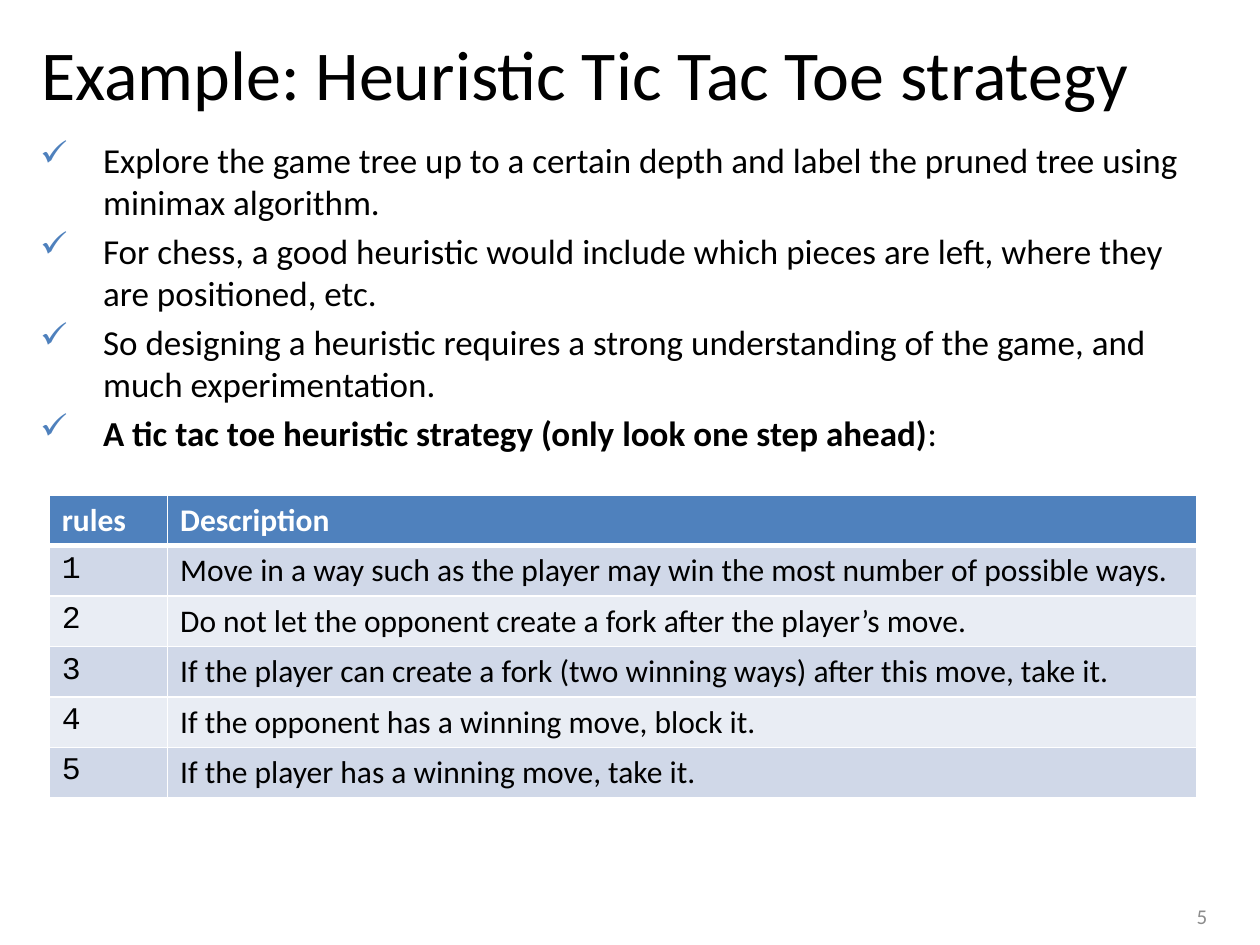
from lxml import etree
from pptx import Presentation
from pptx.dml.color import RGBColor
from pptx.enum.text import MSO_ANCHOR, PP_ALIGN
from pptx.oxml.ns import qn
from pptx.util import Inches, Pt

LEFT, CENTER, RIGHT = PP_ALIGN.LEFT, PP_ALIGN.CENTER, PP_ALIGN.RIGHT
TOP, MIDDLE = MSO_ANCHOR.TOP, MSO_ANCHOR.MIDDLE

COLORS = {
    "text": "000000",
    "accent": "4F81BD",
    "header_text": "FFFFFF",
    "border": "FFFFFF",
    "odd_row": "D0D8E8",
    "even_row": "E9EDF4",
    "page_number": "8C8C8C",
}

# Each point is a list of (text, bold) runs.
POINTS = [
    [("Explore the game tree up to a certain depth and label the pruned tree "
      "using minimax algorithm.", False)],
    [("For chess, a good heuristic would include which pieces are left, where "
      "they are positioned, etc.", False)],
    [("So designing a heuristic requires a strong understanding of the game, "
      "and much experimentation.", False)],
    [("A tic tac toe heuristic strategy (only look one step ahead)", True),
     (":", False)],
]

RULES = [
    "Move in a way such as the player may win the most number of possible ways.",
    "Do not let the opponent create a fork after the player’s move.",
    "If the player can create a fork (two winning ways) after this move, take it.",
    "If the opponent has a winning move, block it.",
    "If the player has a winning move, take it.",
]


class SlideBuilder:
    body_font = "Calibri"
    number_font = "Courier New"

    def __init__(self, slide):
        self.slide = slide

    def style(self, font, size, color, bold=False, name=None):
        font.name = name or self.body_font
        font.size = Pt(size)
        font.bold = bold
        font.color.rgb = RGBColor.from_string(COLORS[color])

    def frame(self, left, top, width, height, anchor=TOP):
        box = self.slide.shapes.add_textbox(
            Inches(left), Inches(top), Inches(width), Inches(height))
        box.text_frame.word_wrap = True
        box.text_frame.vertical_anchor = anchor
        return box.text_frame

    def line(self, text, bounds, size, align, color="text"):
        """Add a single line of text, centred vertically in its bounds."""
        paragraph = self.frame(*bounds, anchor=MIDDLE).paragraphs[0]
        paragraph.text = text
        paragraph.alignment = align
        self.style(paragraph.runs[0].font, size, color)

    def checklist(self, points, bounds, size):
        frame = self.frame(*bounds)
        for index, point in enumerate(points):
            paragraph = frame.add_paragraph() if index else frame.paragraphs[0]
            self.check_mark(paragraph)
            paragraph.alignment = LEFT
            paragraph.space_before = Pt(size * 0.2 if index else 0)
            for text, bold in point:
                run = paragraph.add_run()
                run.text = text
                self.style(run.font, size, "text", bold)

    def check_mark(self, paragraph, indent=0.5):
        properties = paragraph._p.get_or_add_pPr()
        properties.set("marL", str(Inches(indent)))
        properties.set("indent", str(-Inches(indent)))
        color = etree.SubElement(properties, qn("a:buClr"))
        etree.SubElement(color, qn("a:srgbClr"), val=COLORS["accent"])
        etree.SubElement(properties, qn("a:buChar"), char="✓")

    def table(self, header, rows, left, top, widths, row_height, size):
        records = [header, *rows]
        table = self.slide.shapes.add_table(
            len(records), len(widths), Inches(left), Inches(top),
            Inches(sum(widths)), Inches(row_height * len(records))).table
        for column, width in zip(table.columns, widths):
            column.width = Inches(width)
        for row, record in enumerate(records):
            fill = "accent" if row == 0 else "odd_row" if row % 2 else "even_row"
            for column, text in enumerate(record):
                cell = table.cell(row, column)
                self.borders(cell, top=3 if row == 1 else 1,
                             bottom=3 if row == 0 else 1)
                cell.fill.solid()
                cell.fill.fore_color.rgb = RGBColor.from_string(COLORS[fill])
                cell.text_frame.text = text
                font = cell.text_frame.paragraphs[0].runs[0].font
                if row == 0:
                    self.style(font, size, "header_text", bold=True)
                else:
                    name = self.body_font if column else self.number_font
                    self.style(font, size, "text", name=name)

    def borders(self, cell, top, bottom):
        properties = cell._tc.get_or_add_tcPr()
        for side, width in (("L", 1), ("R", 1), ("T", top), ("B", bottom)):
            line = etree.SubElement(properties, qn(f"a:ln{side}"), w=str(Pt(width)))
            fill = etree.SubElement(line, qn("a:solidFill"))
            etree.SubElement(fill, qn("a:srgbClr"), val=COLORS["border"])


def main():
    presentation = Presentation()
    presentation.slide_width = Inches(10)
    presentation.slide_height = Inches(7.5)
    blank = presentation.slide_layouts[6]
    builder = SlideBuilder(presentation.slides.add_slide(blank))

    builder.line("Example: Heuristic Tic Tac Toe strategy",
                 (0.22, 0.27, 8.84, 0.61), 40, CENTER)
    builder.checklist(POINTS, (0.22, 1.05, 9.46, 5.75), 20)
    builder.line("5", (7.35, 7.07, 2.33, 0.4), 12, RIGHT, "page_number")
    numbered_rules = [(str(number), rule) for number, rule in enumerate(RULES, 1)]
    builder.table(("rules", "Description"), numbered_rules,
                  left=0.39, top=3.93, widths=(0.94, 8.17), row_height=0.4, size=18)

    presentation.save("out.pptx")


if __name__ == "__main__":
    main()
